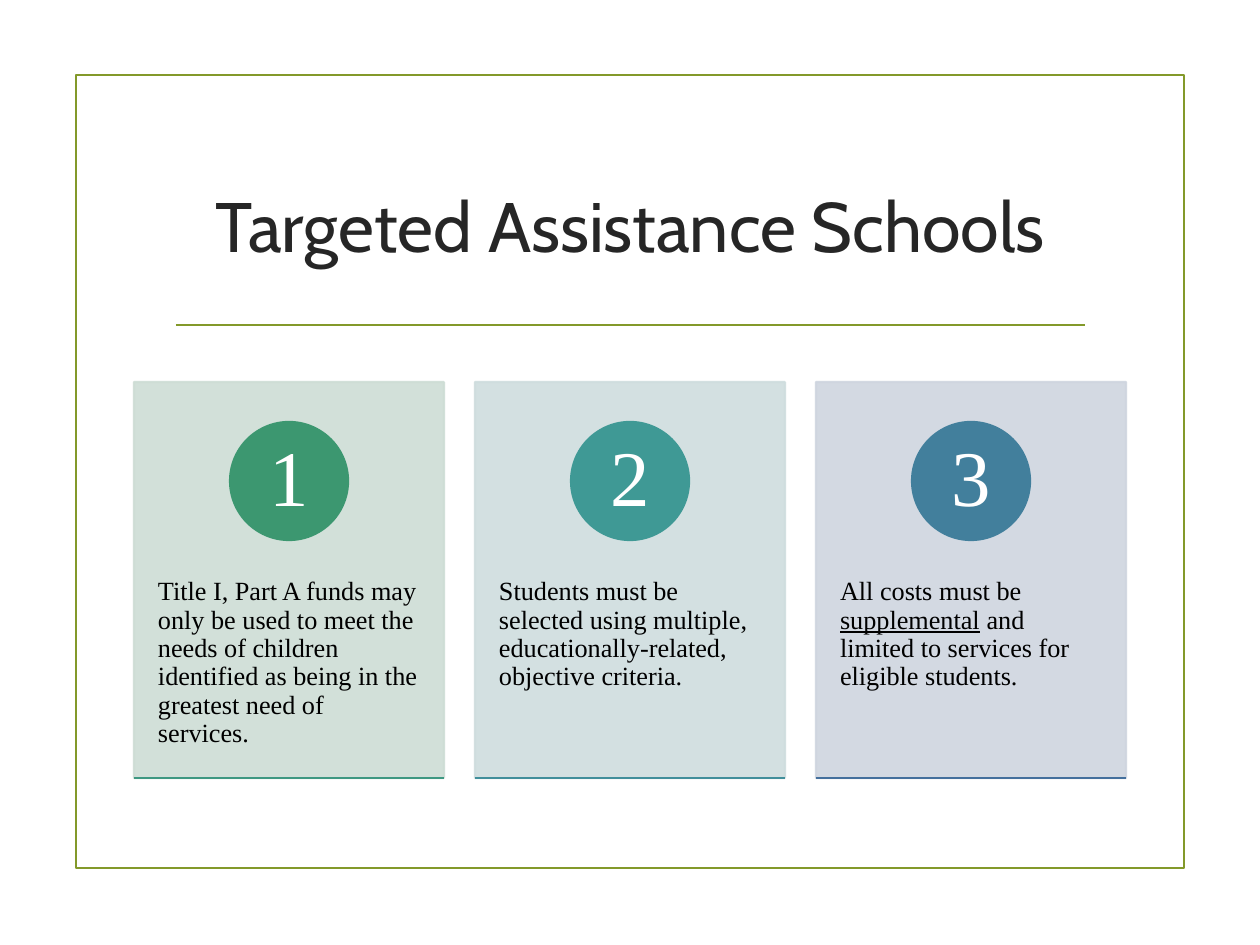
from dataclasses import dataclass

from lxml import etree
from pptx import Presentation
from pptx.dml.color import RGBColor
from pptx.enum.shapes import MSO_CONNECTOR, MSO_SHAPE
from pptx.enum.text import MSO_ANCHOR, PP_ALIGN
from pptx.oxml.ns import qn
from pptx.util import Pt

EMU_PER_PX = 914400 / 126
OLIVE = "83992A"
LINE_WIDTH = Pt(1.25)
BODY_FONT = "Times New Roman"

CARD_LEFT, CARD_TOP, CARD_WIDTH, CARD_HEIGHT = 134, 382, 310, 396
CARD_PITCH = 341
CIRCLE_TOP, CIRCLE_SIZE = 422, 118
BODY_TOP, BODY_HEIGHT = 533, 238


@dataclass(frozen=True)
class Card:
    number: str
    phrases: tuple[str, ...]
    underlined: str
    tint: str
    accent: str
    edge: str


CARDS = [
    Card("1", ("Title I, Part A funds may only be used to meet the needs of children "
               "identified as being in the greatest need of services.",),
         "", "CEDDD5", "3C9770", "3E9882"),
    Card("2", ("Students must be selected using multiple, educationally-related, "
               "objective criteria.",),
         "", "CFDDDE", "3F9995", "418F9B"),
    Card("3", ("All costs must be ", "supplemental",
               " and limited to services for eligible students."),
         "supplemental", "CFD5DF", "427F9C", "44709D"),
]


def px(length: int) -> int:
    return round(length * EMU_PER_PX)


def box(*lengths: int) -> list[int]:
    return [px(length) for length in lengths]


def rgb(value: str) -> RGBColor:
    return RGBColor.from_string(value)


def set_font(font, name: str, size: int, color: str) -> None:
    font.name = name
    font.size = Pt(size)
    font.color.rgb = rgb(color)


def set_margins(frame, horizontal: int, vertical: int) -> None:
    frame.margin_left = frame.margin_right = px(horizontal)
    frame.margin_top = frame.margin_bottom = px(vertical)


def set_opacity(fill_format, percent: int) -> None:
    """Add an alpha value to a solid RGB fill."""
    srgb = fill_format._xPr.find(".//" + qn("a:srgbClr"))
    etree.SubElement(srgb, qn("a:alpha"), val=str(percent * 1000))


def add_panel(slide, kind, bounds: list[int], fill: str | None, line: str,
              opacity: int = 100):
    panel = slide.shapes.add_shape(kind, *bounds)
    panel.shadow.inherit = False
    panel.line.color.rgb = rgb(line)
    panel.line.width = LINE_WIDTH
    if fill is None:
        panel.fill.background()
    else:
        panel.fill.solid()
        panel.fill.fore_color.rgb = rgb(fill)
        if opacity < 100:
            set_opacity(panel.fill, opacity)
            set_opacity(panel.line.fill, opacity)
    return panel


def add_rule(slide, left: int, right: int, y: int, color: str) -> None:
    rule = slide.shapes.add_connector(MSO_CONNECTOR.STRAIGHT, *box(left, y, right, y))
    rule.line.color.rgb = rgb(color)
    rule.line.width = LINE_WIDTH
    etree.SubElement(rule._element.spPr, qn("a:effectLst"))


def add_number(slide, card: Card, left: int) -> None:
    circle_left = left + (CARD_WIDTH - CIRCLE_SIZE) // 2
    circle = add_panel(slide, MSO_SHAPE.OVAL,
                       box(circle_left, CIRCLE_TOP, CIRCLE_SIZE, CIRCLE_SIZE),
                       card.accent, card.accent)
    frame = circle.text_frame
    frame.text = card.number
    frame.vertical_anchor = MSO_ANCHOR.MIDDLE
    set_margins(frame, 9, 1)
    paragraph = frame.paragraphs[0]
    paragraph.alignment = PP_ALIGN.CENTER
    paragraph.line_spacing = 0.9
    set_font(paragraph.runs[0].font, BODY_FONT, 45, "FFFFFF")


def add_body(slide, card: Card, left: int) -> None:
    body = slide.shapes.add_textbox(*box(left, BODY_TOP, CARD_WIDTH, BODY_HEIGHT))
    frame = body.text_frame
    frame.word_wrap = True
    set_margins(frame, 24, 45)
    paragraph = frame.paragraphs[0]
    paragraph.line_spacing = 0.9
    for phrase in card.phrases:
        run = paragraph.add_run()
        run.text = phrase
        set_font(run.font, BODY_FONT, 15, "000000")
        if phrase == card.underlined:
            run.font.underline = True


def add_card(slide, card: Card, left: int) -> None:
    add_panel(slide, MSO_SHAPE.RECTANGLE, box(left, CARD_TOP, CARD_WIDTH, CARD_HEIGHT),
              card.tint, card.tint, opacity=90)
    add_body(slide, card, left)
    add_number(slide, card, left)
    add_rule(slide, left, left + CARD_WIDTH, CARD_TOP + CARD_HEIGHT, card.edge)


def set_title(slide, text: str) -> None:
    title = slide.shapes.title
    title.left, title.top, title.width, title.height = box(134, 135, 992, 180)
    frame = title.text_frame
    frame.text = text
    frame.vertical_anchor = MSO_ANCHOR.MIDDLE
    paragraph = frame.paragraphs[0]
    paragraph.alignment = PP_ALIGN.CENTER
    set_font(paragraph.runs[0].font, "Cabin", 40, "262626")


def main() -> None:
    presentation = Presentation()
    presentation.slide_width, presentation.slide_height = box(1260, 945)
    slide = presentation.slides.add_slide(presentation.slide_layouts[5])
    set_title(slide, "Targeted Assistance Schools")
    add_panel(slide, MSO_SHAPE.RECTANGLE, box(76, 75, 1108, 793), None, OLIVE)
    add_rule(slide, 176, 1085, 325, OLIVE)
    for index, card in enumerate(CARDS):
        add_card(slide, card, CARD_LEFT + index * CARD_PITCH)
    presentation.save("out.pptx")


if __name__ == "__main__":
    main()
